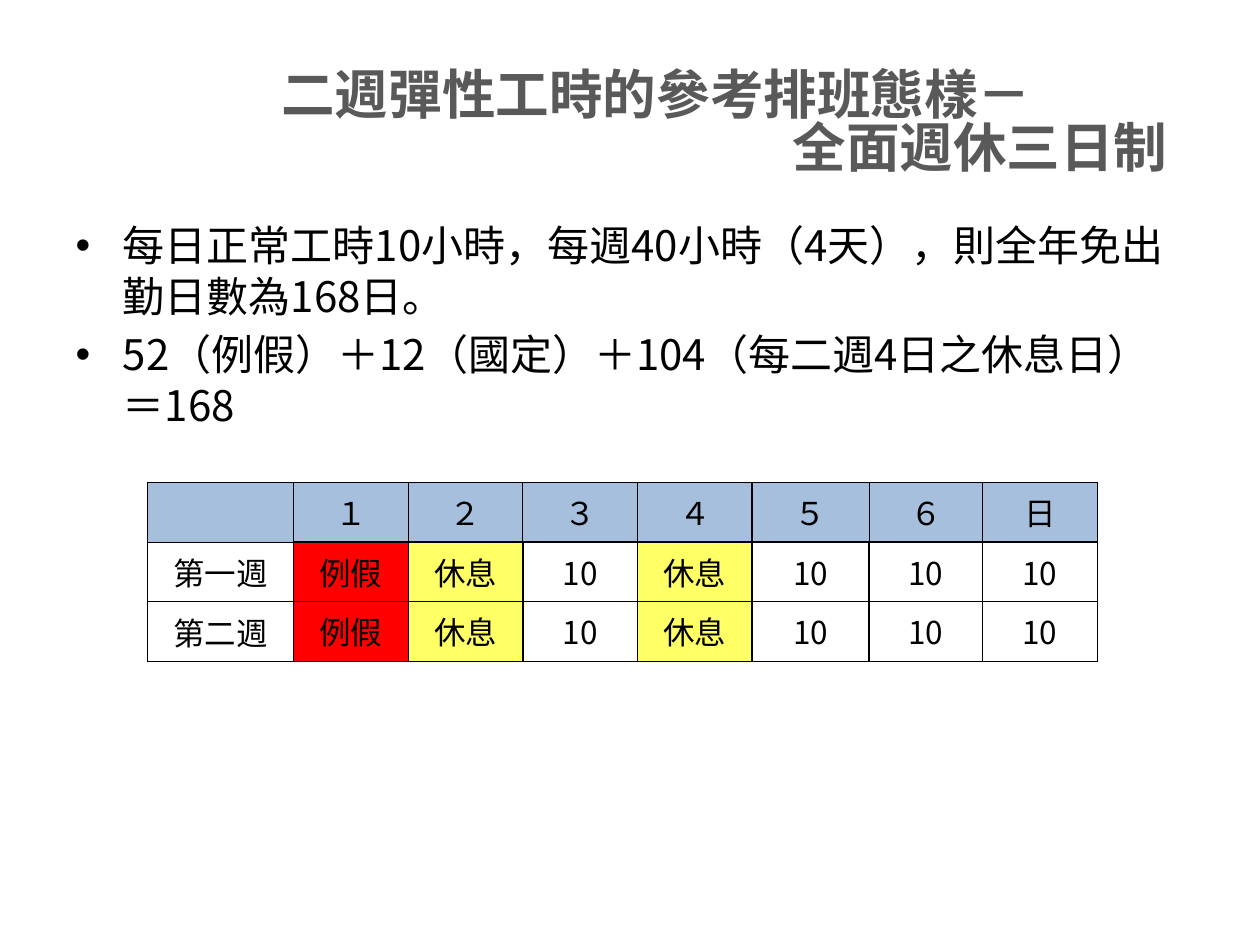
from dataclasses import dataclass

from lxml import etree
from pptx import Presentation
from pptx.dml.color import RGBColor
from pptx.enum.text import MSO_ANCHOR, MSO_AUTO_SIZE, PP_ALIGN
from pptx.oxml.ns import qn
from pptx.util import Cm, Pt

CENTER = PP_ALIGN.CENTER
MIDDLE = MSO_ANCHOR.MIDDLE
TOP = MSO_ANCHOR.TOP
NO_AUTOFIT = MSO_AUTO_SIZE.NONE


@dataclass(frozen=True)
class Theme:
    font: str = "Noto Sans CJK SC"
    title_color: str = "595959"
    text_color: str = "000000"
    header_fill: str = "4F81BD"
    header_opacity: int = 50
    title_size: float = 30.6
    body_size: float = 24
    table_size: float = 18
    thin_line: float = 0.75
    thick_line: float = 1


@dataclass(frozen=True)
class Box:
    left: float
    top: float
    width: float
    height: float


@dataclass(frozen=True)
class TitleLine:
    text: str
    indent: float


THEME = Theme()
TITLE_BOX = Box(0.84, 1.47, 24.13, 2.11)
BODY_BOX = Box(1.27, 4.3, 22.86, 13.48)
TITLE_LINES = [
    TitleLine("二週彈性工時的參考排班態樣－", 0.65),
    TitleLine("全面週休三日制", 13.7),
]
BULLETS = [
    "每日正常工時10小時，每週40小時（4天），則全年免出勤日數為168日。",
    "52（例假）＋12（國定）＋104（每二週4日之休息日）＝168",
]
SHIFTS = ["例假", "休息", "10", "休息", "10", "10", "10"]
SCHEDULE = [
    ["", "１", "２", "３", "４", "５", "６", "日"],
    ["第一週", *SHIFTS],
    ["第二週", *SHIFTS],
]
SHIFT_FILLS = {"例假": "FF0000", "休息": "FFFF66"}
COLUMN_WIDTHS = [2.95, 2.31, 2.31, 2.31, 2.31, 2.36, 2.29, 2.31]
ROW_HEIGHT = 1.2
TABLE_BOX = Box(2.97, 9.73, sum(COLUMN_WIDTHS), ROW_HEIGHT * len(SCHEDULE))


def place(shape, box: Box) -> None:
    shape.left, shape.top = Cm(box.left), Cm(box.top)
    shape.width, shape.height = Cm(box.width), Cm(box.height)


def format_runs(paragraph, size: float, color: str, bold: bool = False) -> None:
    for run in paragraph.runs:
        run.font.name = THEME.font
        run.font.size = Pt(size)
        run.font.bold = bold
        run.font.color.rgb = RGBColor.from_string(color)
        east_asian = etree.SubElement(run.font._element, qn("a:ea"))
        east_asian.set("typeface", THEME.font)


def fill_title(title) -> None:
    place(title, TITLE_BOX)
    frame = title.text_frame
    frame.text = "\n".join(line.text for line in TITLE_LINES)
    frame.auto_size = NO_AUTOFIT
    frame.vertical_anchor = MIDDLE
    for paragraph, line in zip(frame.paragraphs, TITLE_LINES):
        paragraph.alignment = CENTER
        paragraph.line_spacing = 0.83
        paragraph._p.get_or_add_pPr().set("marL", str(Cm(line.indent)))
        format_runs(paragraph, THEME.title_size, THEME.title_color, bold=True)


def fill_body(body) -> None:
    place(body, BODY_BOX)
    frame = body.text_frame
    frame.text = "\n".join(BULLETS)
    frame.auto_size = NO_AUTOFIT
    for index, paragraph in enumerate(frame.paragraphs):
        paragraph.line_spacing = 1.0
        paragraph.space_before = Pt(4.8 if index else 0)
        format_runs(paragraph, THEME.body_size, THEME.text_color)


def border_widths(row: int, column: int) -> dict[str, float]:
    """Thin outer rules on the header row and label column, thick elsewhere."""
    thin, thick = THEME.thin_line, THEME.thick_line
    if row == 0:
        return {"L": thin, "R": thin, "T": thin, "B": thick if column else thin}
    if column == 0:
        return {"L": thin, "R": thick, "T": thin, "B": thin}
    return dict.fromkeys("LRTB", thick)


def set_borders(cell, widths: dict[str, float]) -> None:
    properties = cell._tc.get_or_add_tcPr()
    for position, (side, width) in enumerate(widths.items()):
        line = etree.Element(qn(f"a:ln{side}"), w=str(Pt(width)))
        fill = etree.SubElement(line, qn("a:solidFill"))
        etree.SubElement(fill, qn("a:srgbClr"), val=THEME.text_color)
        properties.insert(position, line)


def set_fill(cell, color: str, opacity: int = 100) -> None:
    cell.fill.solid()
    cell.fill.fore_color.rgb = RGBColor.from_string(color)
    if opacity < 100:
        color_element = cell._tc.tcPr.find(f".//{qn('a:srgbClr')}")
        etree.SubElement(color_element, qn("a:alpha"), val=str(opacity * 1000))


def fill_cell(cell, row: int, column: int) -> None:
    text = SCHEDULE[row][column]
    cell.text_frame.text = text
    cell.vertical_anchor = MIDDLE if row and column == 0 else TOP
    paragraph = cell.text_frame.paragraphs[0]
    paragraph.alignment = CENTER
    format_runs(paragraph, THEME.table_size, THEME.text_color)
    if row == 0:
        set_fill(cell, THEME.header_fill, THEME.header_opacity)
    elif text in SHIFT_FILLS:
        set_fill(cell, SHIFT_FILLS[text])
    else:
        cell.fill.background()
    set_borders(cell, border_widths(row, column))


def add_schedule(slide) -> None:
    frame = slide.shapes.add_table(
        len(SCHEDULE), len(COLUMN_WIDTHS),
        Cm(TABLE_BOX.left), Cm(TABLE_BOX.top),
        Cm(TABLE_BOX.width), Cm(TABLE_BOX.height),
    )
    table = frame.table
    table.first_row = table.horz_banding = False
    for column, width in zip(table.columns, COLUMN_WIDTHS):
        column.width = Cm(width)
    for row_index, row in enumerate(table.rows):
        row.height = Cm(ROW_HEIGHT)
        for column_index, cell in enumerate(row.cells):
            fill_cell(cell, row_index, column_index)


def main() -> None:
    presentation = Presentation()
    presentation.slide_width, presentation.slide_height = Cm(25.4), Cm(19.05)
    slide = presentation.slides.add_slide(presentation.slide_layouts[1])
    fill_title(slide.shapes.title)
    fill_body(slide.placeholders[1])
    add_schedule(slide)
    presentation.save("out.pptx")


if __name__ == "__main__":
    main()
